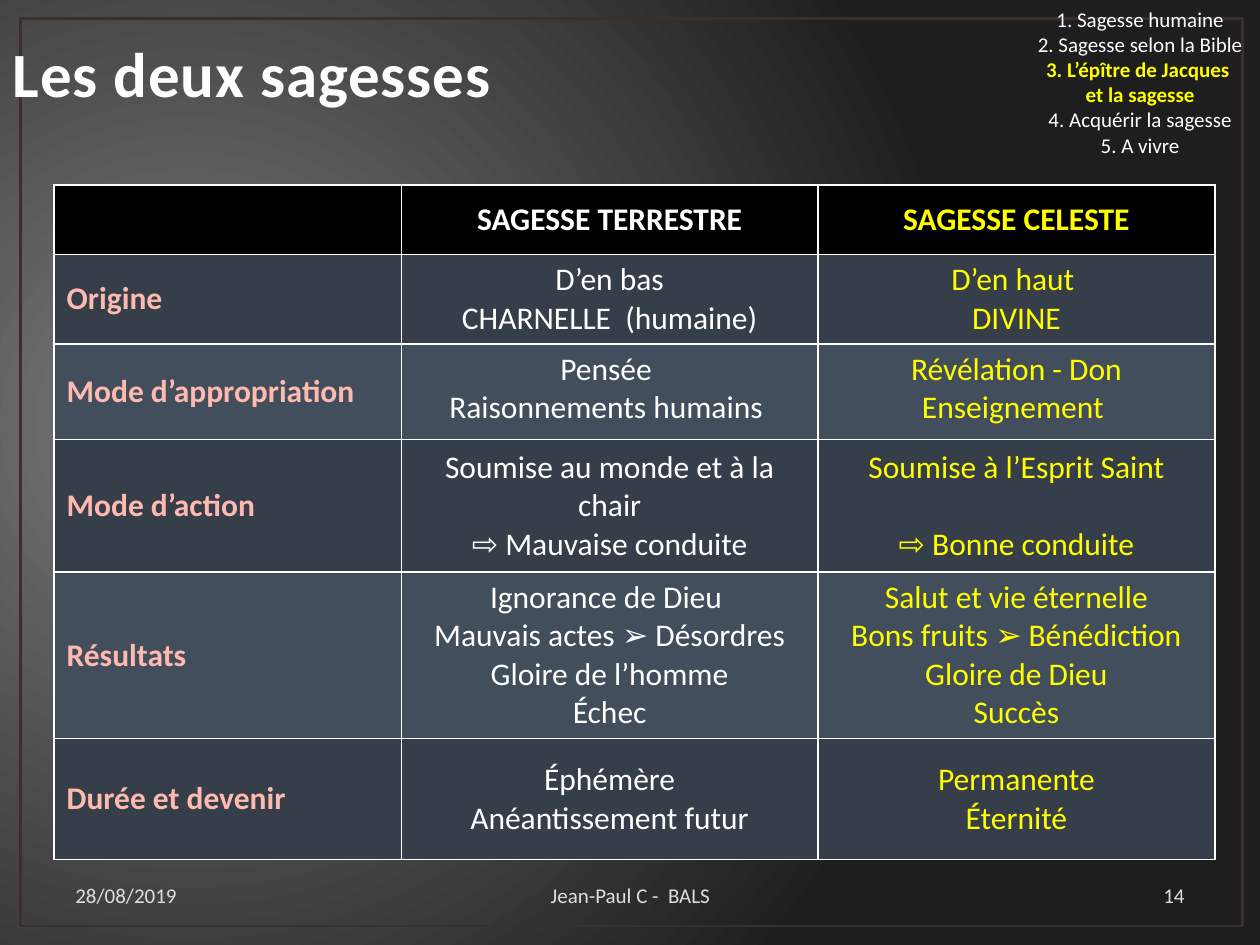
from lxml import etree
from pptx import Presentation
from pptx import util as u
from pptx.dml import color
from pptx.enum import shapes, text
from pptx.oxml import ns

THEME = {
    "font": "Calibri",
    "title_size": 36, "table_size": 18, "small_size": 12,
    "glow": "7A7A7A", "dark": "1E1E1E", "frame": "39302B",
    "title": "FEFEFE", "outline": "560000", "footer": "DEDEE0",
    "white": "FFFFFF", "yellow": "FFFF00", "label": "FFBAB0",
    "header": "000000", "bands": ("353E49", "424E5B"),
}
ALIGN = text.PP_ALIGN
ANCHOR = text.MSO_ANCHOR


def rgb(name):
    return color.RGBColor.from_string(THEME.get(name, name))


def write(frame, lines, size, align):
    for index, (words, tint, bold) in enumerate(lines):
        para = frame.paragraphs[0] if index == 0 else frame.add_paragraph()
        para.alignment = align
        span = para.add_run()
        span.text = words
        span.font.color.rgb = rgb(tint)
        formats = {"name": THEME["font"], "size": u.Pt(THEME[size]), "bold": bold}
        for key, value in formats.items():
            setattr(span.font, key, value)


deck = Presentation()
deck.slide_width, deck.slide_height = u.Cm(25.4), u.Cm(19.05)
page = deck.slides.add_slide(deck.slide_layouts[5])

fill = page.background.fill
fill.gradient()
for stop, tint, position in zip(fill.gradient_stops, ("glow", "dark"), (0, 1)):
    stop.color.rgb = rgb(tint)
    stop.position = position
gradient = page.element.find(".//" + ns.qn("a:gradFill"))
linear = gradient.find(ns.qn("a:lin"))
radial = etree.Element(ns.qn("a:path"), {"path": "circle"})
etree.SubElement(radial, ns.qn("a:fillToRect"),
                 {"l": "15000", "t": "50000", "r": "85000", "b": "60000"})
gradient.replace(linear, radial)

border = page.shapes.add_shape(shapes.MSO_SHAPE.RECTANGLE,
                               u.Cm(0.41), u.Cm(0.38), u.Cm(24.64), u.Cm(18.29))
border.shadow.inherit = False
border.fill.background()
border.line.color.rgb = rgb("frame")
border.line.width = u.Pt(1.5)
tree = border.element.getparent()
tree.remove(border.element)
tree.insert(2, border.element)

title = page.shapes.title
placement = {"left": 0, "top": 0, "width": 25.4, "height": 2.34}
for key, value in placement.items():
    setattr(title, key, u.Cm(value))
title.text_frame.auto_size = text.MSO_AUTO_SIZE.NONE
title.text_frame.vertical_anchor = ANCHOR.BOTTOM
write(title.text_frame, [("Les deux sagesses", "title", True)], "title_size", ALIGN.LEFT)
properties = title.text_frame.paragraphs[0].runs[0].font._element
properties.set("spc", "50")
outline = etree.Element(ns.qn("a:ln"), {"w": str(u.Pt(1.05))})
solid = etree.SubElement(outline, ns.qn("a:solidFill"))
etree.SubElement(solid, ns.qn("a:srgbClr"), {"val": THEME["outline"]})
properties.insert(0, outline)

HEADINGS = ["", "SAGESSE TERRESTRE", "SAGESSE CELESTE"]
ROWS = [
    ("Origine", ["D’en bas", "CHARNELLE  (humaine)"], ["D’en haut ", "DIVINE"]),
    ("Mode d’appropriation", ["Pensée ", "Raisonnements humains "],
     ["Révélation - Don", "Enseignement "]),
    ("Mode d’action", ["Soumise au monde et à la chair", "⇨ Mauvaise conduite"],
     ["Soumise à l’Esprit Saint", "⇨ Bonne conduite"]),
    ("Résultats",
     ["Ignorance de Dieu ", "Mauvais actes ➢ Désordres", "Gloire de l’homme", "Échec"],
     ["Salut et vie éternelle", "Bons fruits ➢ Bénédiction", "Gloire de Dieu", "Succès"]),
    ("Durée et devenir", ["Éphémère", "Anéantissement futur"], ["Permanente", "Éternité"]),
]
TOP_ROWS = ("Origine", "Mode d’appropriation", "Résultats")
TINTS = ("label", "white", "yellow")

table = page.shapes.add_table(6, 3, u.Cm(1.09), u.Cm(3.73), u.Cm(23.4), u.Cm(13.51)).table
for column, width in zip(table.columns, (7, 8.4, 8)):
    column.width = u.Cm(width)
for row, height in zip(table.rows, (1.4, 1.6, 1.93, 2.67, 2.84, 2.44)):
    row.height = u.Cm(height)

for row_index, row in enumerate([HEADINGS] + ROWS):
    for column_index, content in enumerate(row):
        cell = table.cell(row_index, column_index)
        is_key = row_index == 0 or column_index == 0
        lines = [content] if is_key else content
        cell.vertical_anchor = (ANCHOR.TOP if row[0] in TOP_ROWS and not is_key
                                else ANCHOR.MIDDLE)
        if content:
            write(cell.text_frame, [(line, TINTS[column_index], is_key) for line in lines],
                  "table_size", ALIGN.CENTER if column_index else ALIGN.LEFT)
        cell.fill.solid()
        cell.fill.fore_color.rgb = rgb("header" if row_index == 0
                                       else THEME["bands"][(row_index - 1) % 2])
        cell_properties = cell._tc.get_or_add_tcPr()
        for order, side in enumerate(("lnL", "lnR", "lnT", "lnB")):
            edge = etree.Element(ns.qn("a:" + side), {"w": str(u.Pt(1))})
            solid = etree.SubElement(edge, ns.qn("a:solidFill"))
            etree.SubElement(solid, ns.qn("a:srgbClr"), {"val": THEME["white"]})
            cell_properties.insert(order, edge)
table.cell(3, 2).text_frame.paragraphs[1].space_before = u.Pt(22)

AGENDA = [
    ("1. Sagesse humaine", "white", False),
    ("2. Sagesse selon la Bible", "white", False),
    ("3. L’épître de Jacques ", "yellow", True),
    ("et la sagesse", "yellow", True),
    ("4. Acquérir la sagesse", "white", False),
    ("5. A vivre", "white", False),
]
BOXES = [
    (1.27, 17.53, 5.92, 1.02, [("28/08/2019", "footer", False)], ALIGN.LEFT, ANCHOR.MIDDLE),
    (7.87, 17.53, 9.68, 1.02, [("Jean-Paul C -  BALS", "footer", False)],
     ALIGN.CENTER, ANCHOR.MIDDLE),
    (20.57, 0, 4.83, 3.33, AGENDA, ALIGN.CENTER, ANCHOR.TOP),
    (18.21, 17.53, 5.92, 1.02, [("14", "footer", False)], ALIGN.RIGHT, ANCHOR.MIDDLE),
]
for left, top, width, height, lines, align, anchor in BOXES:
    box = page.shapes.add_textbox(u.Cm(left), u.Cm(top), u.Cm(width), u.Cm(height))
    box.text_frame.word_wrap = True
    box.text_frame.vertical_anchor = anchor
    write(box.text_frame, lines, "small_size", align)

deck.save("out.pptx")
